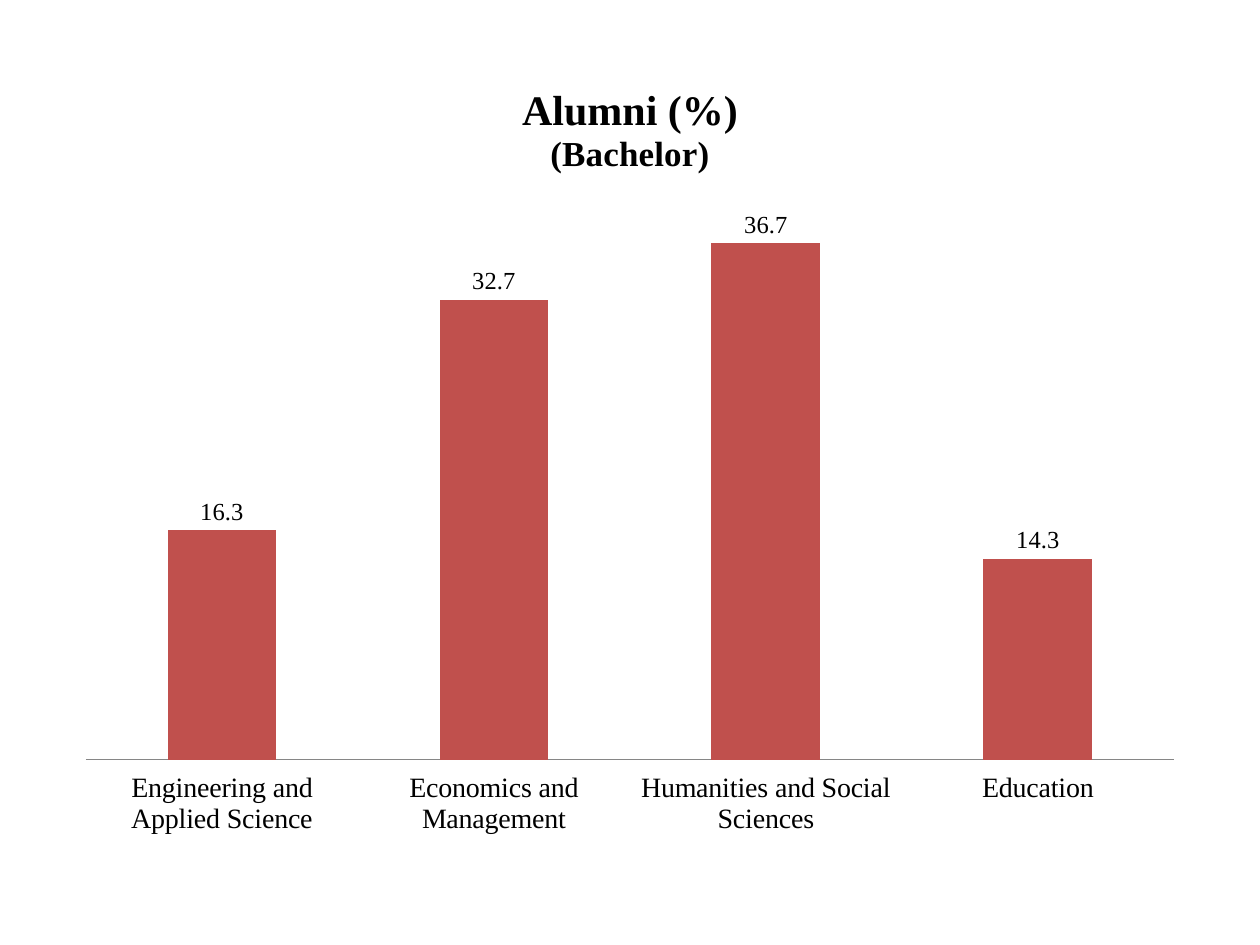
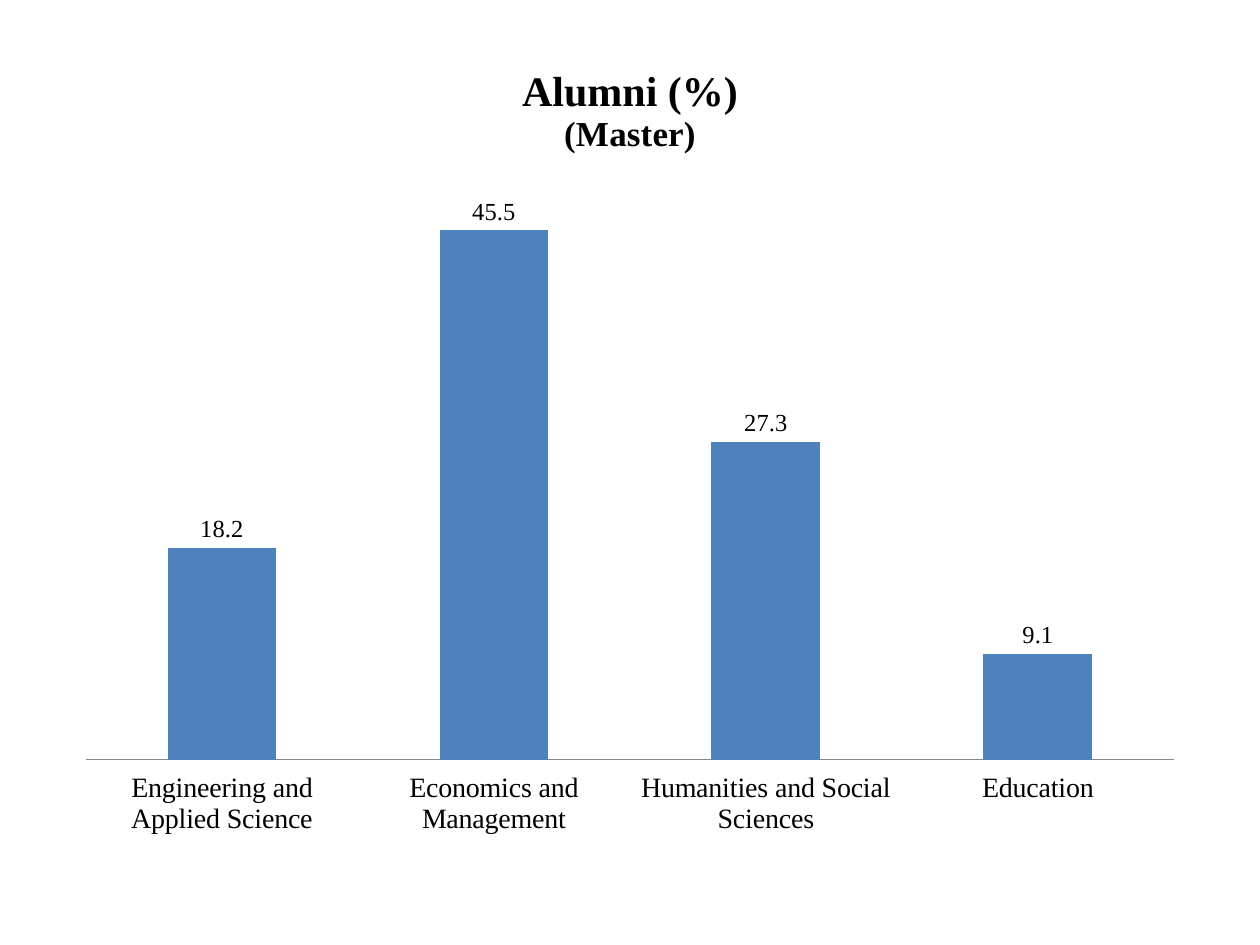
from dataclasses import dataclass

from lxml import etree
from pptx import Presentation
from pptx.chart.data import CategoryChartData
from pptx.dml.color import RGBColor
from pptx.enum.chart import XL_CHART_TYPE, XL_LABEL_POSITION, XL_TICK_LABEL_POSITION, XL_TICK_MARK
from pptx.oxml.ns import qn
from pptx.util import Emu, Pt

COLUMNS = XL_CHART_TYPE.COLUMN_CLUSTERED
ABOVE_BAR = XL_LABEL_POSITION.OUTSIDE_END
BELOW_AXIS = XL_TICK_LABEL_POSITION.LOW
NO_TICK = XL_TICK_MARK.NONE

HEADING = "Alumni (%)"
SERIES = "Series 1"
FACULTIES = (
    "Engineering and Applied Science",
    "Economics and Management",
    "Humanities and Social Sciences",
    "Education",
)


@dataclass(frozen=True)
class Theme:
    font: str = "Times New Roman"
    base_font: str = "Calibri"
    text: RGBColor = RGBColor(0x00, 0x00, 0x00)
    axis: RGBColor = RGBColor(0x86, 0x86, 0x86)
    red: RGBColor = RGBColor(0xC0, 0x50, 0x4D)
    blue: RGBColor = RGBColor(0x4F, 0x81, 0xBD)
    base_size: int = 10
    heading_size: int = 24
    degree_size: int = 20
    faculty_size: int = 16
    share_size: int = 14


THEME = Theme()

# Vertical places are in px; axis_max is the top of the hidden value axis.
DEGREES = (
    dict(degree="(Bachelor)", shares=(16.3, 32.7, 36.7, 14.3), color=THEME.red,
         chart_top=59, plot_top=197, axis_max=40),
    dict(degree="(Master)", shares=(18.2, 45.5, 27.3, 9.1), color=THEME.blue,
         chart_top=39, plot_top=178, axis_max=50),
)

PX = 914400 // 126
SLIDE_W, SLIDE_H = 1260, 945
CHART_LEFT, CHART_RIGHT, CHART_BOTTOM = 63, 1197, 844
PLOT_LEFT, PLOT_RIGHT, BASELINE = 86, 1174, 760


def px(length):
    return Emu(length * PX)


def style_font(font, size, bold=False, name=THEME.font):
    font.name = name
    font.size = Pt(size)
    font.bold = bold
    font.color.rgb = THEME.text


def place_plot(chart, chart_top, plot_top):
    """Fix the inner plot area as fractions of the chart frame."""
    chart_w, chart_h = CHART_RIGHT - CHART_LEFT, CHART_BOTTOM - chart_top
    settings = {
        "layoutTarget": "inner",
        "xMode": "edge",
        "yMode": "edge",
        "x": (PLOT_LEFT - CHART_LEFT) / chart_w,
        "y": (plot_top - chart_top) / chart_h,
        "w": (PLOT_RIGHT - PLOT_LEFT) / chart_w,
        "h": (BASELINE - plot_top) / chart_h,
    }
    plot_area = next(chart.element.iter(qn("c:plotArea")))
    for old_layout in plot_area.findall(qn("c:layout")):
        plot_area.remove(old_layout)
    layout = etree.Element(qn("c:layout"))
    manual = etree.SubElement(layout, qn("c:manualLayout"))
    for tag, value in settings.items():
        etree.SubElement(manual, qn(f"c:{tag}")).set("val", str(value))
    plot_area.insert(0, layout)


def add_title(chart, degree):
    frame = chart.chart_title.text_frame
    lines = ((HEADING, THEME.heading_size), (degree, THEME.degree_size))
    for index, (line, size) in enumerate(lines):
        paragraph = frame.add_paragraph() if index else frame.paragraphs[0]
        run = paragraph.add_run()
        run.text = line
        style_font(run.font, size, bold=True)
    chart.chart_title.include_in_layout = False


def style_axes(chart, axis_max):
    faculties = chart.category_axis
    faculties.major_tick_mark = faculties.minor_tick_mark = NO_TICK
    faculties.tick_label_position = BELOW_AXIS
    faculties.format.line.color.rgb = THEME.axis
    faculties.format.line.width = Pt(0.75)
    style_font(faculties.tick_labels.font, THEME.faculty_size)
    percent = chart.value_axis
    percent.minimum_scale, percent.maximum_scale = 0, axis_max
    percent.has_major_gridlines = False
    percent.visible = False


def style_bars(plot, color):
    plot.gap_width, plot.overlap = 150, -25
    plot.vary_by_categories = False
    bars = plot.series[0]
    bars.format.fill.solid()
    bars.format.fill.fore_color.rgb = color
    bars.invert_if_negative = False
    labels = bars.data_labels
    labels.show_value = True
    labels.position = ABOVE_BAR
    labels.number_format, labels.number_format_is_linked = "0.0", False
    style_font(labels.font, THEME.share_size)


def add_alumni_chart(slide, degree, shares, color, chart_top, plot_top, axis_max):
    data = CategoryChartData()
    data.categories = FACULTIES
    data.add_series(SERIES, shares)
    chart = slide.shapes.add_chart(
        COLUMNS, px(CHART_LEFT), px(chart_top),
        px(CHART_RIGHT - CHART_LEFT), px(CHART_BOTTOM - chart_top), data,
    ).chart
    style_font(chart.font, THEME.base_size, name=THEME.base_font)
    chart.has_legend = False
    add_title(chart, degree)
    style_axes(chart, axis_max)
    style_bars(chart.plots[0], color)
    place_plot(chart, chart_top, plot_top)


def main():
    deck = Presentation()
    deck.slide_width, deck.slide_height = px(SLIDE_W), px(SLIDE_H)
    blank = deck.slide_layouts[6]
    for alumni in DEGREES:
        add_alumni_chart(deck.slides.add_slide(blank), **alumni)
    deck.save("out.pptx")


if __name__ == "__main__":
    main()
